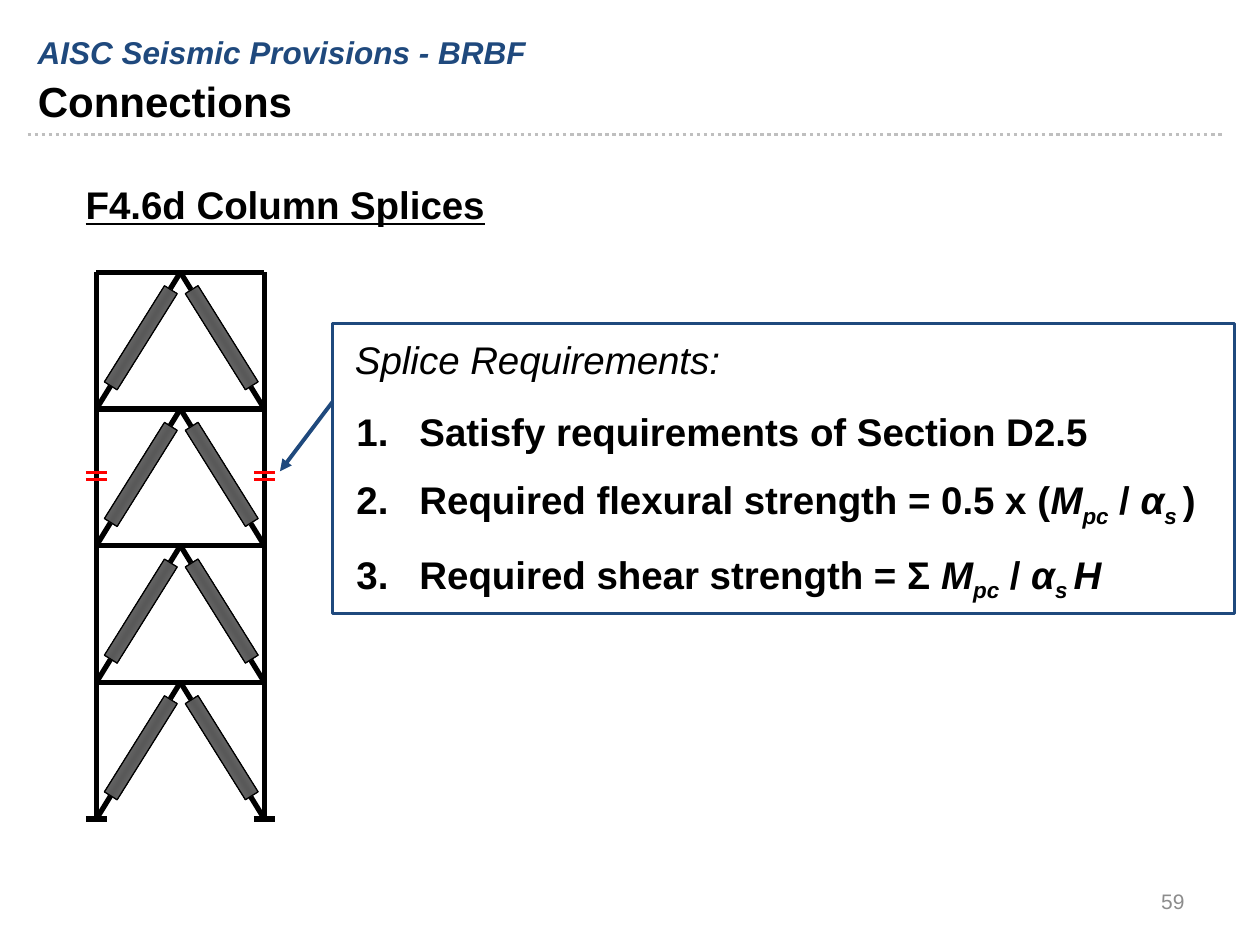
from copy import deepcopy
from dataclasses import dataclass

from lxml import etree
from pptx import Presentation
from pptx.dml.color import RGBColor
from pptx.enum.dml import MSO_LINE
from pptx.enum.shapes import MSO_CONNECTOR, MSO_SHAPE
from pptx.enum.text import MSO_ANCHOR, MSO_AUTO_SIZE, PP_ALIGN
from pptx.oxml.ns import qn
from pptx.util import Pt

STRAIGHT = MSO_CONNECTOR.STRAIGHT
RECTANGLE = MSO_SHAPE.RECTANGLE
DOTTED = MSO_LINE.ROUND_DOT
TOP, MIDDLE = MSO_ANCHOR.TOP, MSO_ANCHOR.MIDDLE
LEFT, RIGHT = PP_ALIGN.LEFT, PP_ALIGN.RIGHT
NO_AUTOFIT = MSO_AUTO_SIZE.NONE
TITLE_ONLY = 5


@dataclass(frozen=True)
class Theme:
    font: str = "Arial"
    ink: str = "000000"
    accent: str = "1F497D"
    splice: str = "FF0000"
    rule: str = "BFBFBF"
    number: str = "8C8C8C"
    brace_edge: str = "C0C0C0"
    brace_core: str = "595959"
    title_size: float = 24
    section_size: float = 18
    body_size: float = 22
    number_size: float = 12


@dataclass(frozen=True)
class Span:
    text: str
    italic: bool = False
    subscript: bool = False


@dataclass(frozen=True)
class Frame:
    left: float = 55.1
    roof: float = 155.6
    bay: float = 96
    storey: float = 78.1
    storeys: int = 4

    @property
    def columns(self) -> tuple[float, float]:
        return self.left, self.left + self.bay

    @property
    def base(self) -> float:
        return self.roof + self.storeys * self.storey


THEME = Theme()
FRAME = Frame()
STRENGTH_RATIO = [Span("M", italic=True), Span("pc", italic=True, subscript=True),
                  Span(" / "), Span("α", italic=True),
                  Span("s ", italic=True, subscript=True)]
REQUIREMENTS = [
    [Span("Satisfy requirements of Section D2.5")],
    [Span("Required flexural strength = 0.5 x ("), *STRENGTH_RATIO, Span(")")],
    [Span("Required shear strength = Σ "), *STRENGTH_RATIO, Span("H", italic=True)],
]


def color(code: str) -> RGBColor:
    return RGBColor.from_string(code)


def add_line(shapes, start: tuple, end: tuple, line_color: str, width: float,
             dash=None, arrow: bool = False) -> None:
    line = shapes.add_connector(STRAIGHT, *map(Pt, (*start, *end)))
    line.line.color.rgb = color(line_color)
    line.line.width = Pt(width)
    if dash is not None:
        line.line.dash_style = dash
    if arrow:
        etree.SubElement(line.line._get_or_add_ln(), qn("a:tailEnd"), type="triangle")
    etree.SubElement(line._element.spPr, qn("a:effectLst"))


def add_rectangle(shapes, area: tuple, line_color: str, width: float):
    box = shapes.add_shape(RECTANGLE, *map(Pt, area))
    box.shadow.inherit = False
    box.line.color.rgb = color(line_color)
    box.line.width = Pt(width)
    return box


def place(shape, area: tuple) -> None:
    shape.left, shape.top, shape.width, shape.height = map(Pt, area)


def write(box, paragraphs: list, *, size: float, text_color: str = THEME.ink,
          bold: bool = False, italic: bool = False, underline: bool = False,
          align=LEFT, anchor=TOP, numbered: bool = False, gap: float = 0) -> None:
    """Fill a box with paragraphs, each a list of spans."""
    frame = box.text_frame
    frame.word_wrap = True
    frame.auto_size = NO_AUTOFIT
    frame.vertical_anchor = anchor
    frame.margin_left = frame.margin_right = Pt(7.2)
    frame.margin_top = frame.margin_bottom = Pt(3.6)
    for index, spans in enumerate(paragraphs):
        para = frame.add_paragraph() if index else frame.paragraphs[0]
        para.alignment = align
        para.space_before = Pt(gap if index else 0)
        if numbered:
            properties = para._p.get_or_add_pPr()
            properties.set("marL", str(Pt(36)))
            properties.set("indent", str(-Pt(36)))
            etree.SubElement(properties, qn("a:buFont"), typeface="+mj-lt")
            etree.SubElement(properties, qn("a:buAutoNum"), type="arabicPeriod")
        for span in spans:
            run = para.add_run()
            run.text = span.text
            font = run.font
            font.name, font.size = THEME.font, Pt(size)
            font.color.rgb = color(text_color)
            font.bold, font.underline = bold, underline
            font.italic = italic or span.italic
            if span.subscript:
                run._r.get_or_add_rPr().set("baseline", "-25000")


def add_text(shapes, area: tuple, paragraphs: list, **text_format) -> None:
    write(shapes.add_textbox(*map(Pt, area)), paragraphs, **text_format)


def add_brace_casing(shapes, center_x: float, center_y: float, angle: float) -> None:
    length, depth = 64.8, 8.6
    area = (center_x - length / 2, center_y - depth / 2, length, depth)
    casing = add_rectangle(shapes, area, THEME.ink, 0.75)
    casing.rotation = angle
    casing.fill.gradient()
    casing.fill.gradient_angle = 270
    first, last = casing.fill.gradient_stops
    first.color.rgb = last.color.rgb = color(THEME.brace_edge)
    first.position, last.position = 0, 1
    stops = casing._element.spPr.find(qn("a:gradFill")).find(qn("a:gsLst"))
    stops.insert(1, deepcopy(stops[0]))
    core = casing.fill.gradient_stops[1]
    core.position, core.color.rgb = 0.5, color(THEME.brace_core)


def add_storey(shapes, top: float) -> None:
    left, right = FRAME.columns
    apex = ((left + right) / 2, top)
    bottom = top + FRAME.storey
    add_line(shapes, (left, top), (right, top), THEME.ink, 3)
    for column in FRAME.columns:
        add_line(shapes, (column, bottom), (column, top), THEME.ink, 3)
        add_line(shapes, (column, bottom), apex, THEME.ink, 3)
    add_brace_casing(shapes, left + 25.4, top + 37.4, 302)
    add_brace_casing(shapes, right - 24.4, top + 37.4, 58)


def add_braced_frame(shapes) -> None:
    for storey in range(FRAME.storeys):
        add_storey(shapes, FRAME.roof + storey * FRAME.storey)
    marks = [(FRAME.base, THEME.ink, 3), (270, THEME.splice, 1.75),
             (274.2, THEME.splice, 1.75)]
    for column in FRAME.columns:
        for height, mark_color, width in marks:
            add_line(shapes, (column - 6, height), (column + 6, height),
                     mark_color, width)


def main() -> None:
    deck = Presentation()
    deck.slide_width, deck.slide_height = Pt(720), Pt(540)
    page = deck.slides.add_slide(deck.slide_layouts[TITLE_ONLY])
    shapes = page.shapes

    add_line(shapes, (15.8, 77), (700, 77), THEME.rule, 2, dash=DOTTED)
    place(shapes.title, (14.4, 39.6, 646.6, 31.7))
    write(shapes.title, [[Span("Connections")]], size=THEME.title_size, bold=True)
    add_text(shapes, (14.4, 15.1, 646.6, 22.3), [[Span("AISC Seismic Provisions - BRBF")]],
             size=THEME.section_size, text_color=THEME.accent, bold=True, italic=True)
    add_text(shapes, (41.8, 100.1, 454.3, 33.8), [[Span("F4.6d Column Splices")]],
             size=THEME.body_size, bold=True, underline=True)

    add_braced_frame(shapes.add_group_shape().shapes)

    panel = add_rectangle(shapes, (190, 185, 515.6, 165.6), THEME.accent, 1.75)
    panel.fill.background()
    add_line(shapes, (190, 229.7), (160, 269.3), THEME.accent, 2.25, arrow=True)
    add_text(shapes, (195.8, 188.6, 304.6, 33.8), [[Span("Splice Requirements:")]],
             size=THEME.body_size, italic=True)
    add_text(shapes, (196.6, 229.7, 503.3, 113.8), REQUIREMENTS,
             size=THEME.body_size, bold=True, numbered=True, gap=12.5)
    add_text(shapes, (516.2, 500.4, 167.8, 28.8), [[Span("59")]], size=THEME.number_size,
             text_color=THEME.number, align=RIGHT, anchor=MIDDLE)

    deck.save("out.pptx")


if __name__ == "__main__":
    main()
